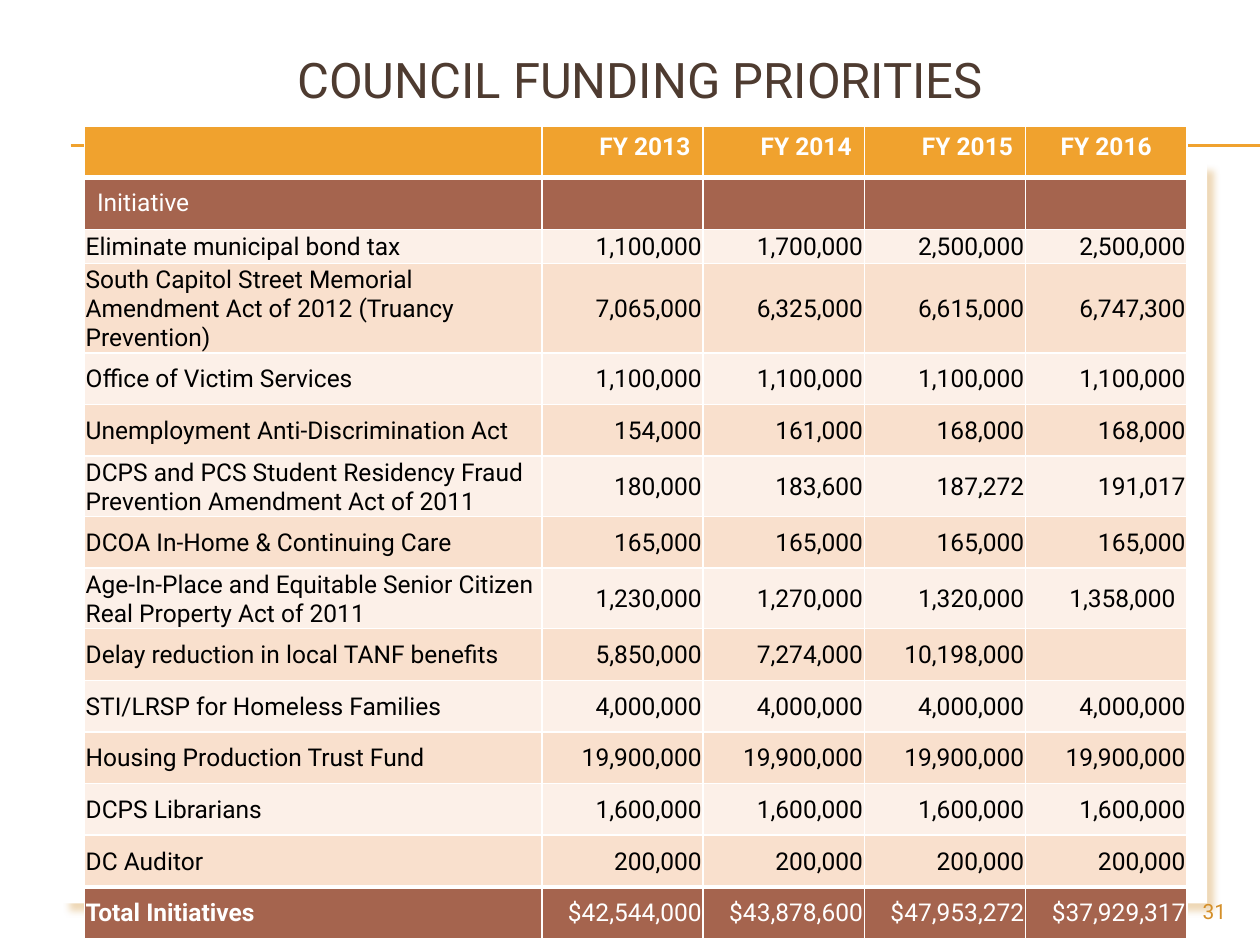
import pptx
import pptx.dml.color
import pptx.enum.shapes
import pptx.enum.text
import pptx.oxml.ns
import pptx.util
from lxml import etree

RGBColor = pptx.dml.color.RGBColor
Align = pptx.enum.text.PP_ALIGN
Anchor = pptx.enum.text.MSO_ANCHOR

WHITE = RGBColor(0xFF, 0xFF, 0xFF)
BLACK = RGBColor(0x00, 0x00, 0x00)
ORANGE = RGBColor(0xF0, 0xA2, 0x2E)
AMBER = RGBColor(0xD4, 0x8F, 0x29)
SHADOW = RGBColor(0xC8, 0x7D, 0x0E)
BROWN = RGBColor(0x4E, 0x3B, 0x30)
RUST = RGBColor(0xA5, 0x64, 0x4E)
BANDS = (RGBColor(0xFC, 0xF0, 0xE8), RGBColor(0xF9, 0xE0, 0xCD))

GRID_COLUMNS, GRID_ROWS = 100, 75
FONT = "Roboto"

YEARS = ["", "FY 2013", "FY 2014", "FY 2015", "FY 2016"]
INITIATIVES = [
    ("Eliminate municipal bond tax", "1,100,000", "1,700,000", "2,500,000", "2,500,000"),
    ("South Capitol Street Memorial Amendment Act of 2012 (Truancy Prevention)",
     "7,065,000", "6,325,000", "6,615,000", "6,747,300"),
    ("Office of Victim Services",) + ("1,100,000",) * 4,
    ("Unemployment Anti-Discrimination Act", "154,000", "161,000", "168,000", "168,000"),
    ("DCPS and PCS Student Residency Fraud Prevention Amendment Act of 2011",
     "180,000", "183,600", "187,272", "191,017"),
    ("DCOA In-Home & Continuing Care",) + ("165,000",) * 4,
    ("Age-In-Place and Equitable Senior Citizen Real Property Act of 2011",
     "1,230,000", "1,270,000", "1,320,000", "1,358,000"),
    ("Delay reduction in local TANF benefits", "5,850,000", "7,274,000", "10,198,000", ""),
    ("STI/LRSP for Homeless Families",) + ("4,000,000",) * 4,
    ("Housing Production Trust Fund",) + ("19,900,000",) * 4,
    ("DCPS Librarians",) + ("1,600,000",) * 4,
    ("DC Auditor",) + ("200,000",) * 4,
]
TOTALS = ("Total Initiatives", "$42,544,000", "$43,878,600", "$47,953,272", "$37,929,317")
ROW_HEIGHTS = [4.1, 4.1, 2.7, 4.8, 4.1, 4.1, 4.8, 4.1, 4.8] + [4.1] * 6
COLUMN_WIDTHS = [36.3] + [12.8] * 4


def write(frame, text, size=14, color=BLACK, bold=False, align=Align.LEFT):
    paragraph = frame.paragraphs[0]
    paragraph.alignment = align
    if text:
        run = paragraph.add_run()
        run.text = text
        run.font.name = FONT
        run.font.size = pptx.util.Pt(size)
        run.font.bold = bold
        run.font.color.rgb = color


def add_xml(parent, tag, **attributes):
    return etree.SubElement(parent, pptx.oxml.ns.qn(tag), attributes)


class FundingSlide:
    def __init__(self, deck):
        self.column = deck.slide_width / GRID_COLUMNS
        self.row = deck.slide_height / GRID_ROWS
        self.slide = deck.slides.add_slide(deck.slide_layouts[5])

    def box(self, left, top, width, height):
        return (int(left * self.column), int(top * self.row),
                int(width * self.column), int(height * self.row))

    def title(self, text, *place):
        heading = self.slide.shapes.title
        heading.left, heading.top, heading.width, heading.height = self.box(*place)
        heading.text_frame.vertical_anchor = Anchor.MIDDLE
        write(heading.text_frame, text, size=28, color=BROWN, align=Align.CENTER)

    def rule(self, start, end, top):
        x, y, width, _ = self.box(start, top, end - start, 0)
        line = self.slide.shapes.add_connector(
            pptx.enum.shapes.MSO_CONNECTOR.STRAIGHT, x, y, x + width, y)
        line.line.color.rgb = ORANGE
        line.line.width = pptx.util.Pt(0.75)
        add_xml(line._element.spPr, "a:effectLst")

    def panel(self, *place):
        panel = self.slide.shapes.add_shape(
            pptx.enum.shapes.MSO_SHAPE.RECTANGLE, *self.box(*place))
        panel.fill.solid()
        panel.fill.fore_color.rgb = WHITE
        panel.line.fill.background()
        panel.shadow.inherit = False
        effects = panel._element.spPr.find(pptx.oxml.ns.qn("a:effectLst"))
        shadow = add_xml(effects, "a:outerShdw", blurRad=str(pptx.util.Pt(4)),
                         dist=str(pptx.util.Pt(6)), dir="2700000", algn="tl",
                         rotWithShape="0")
        add_xml(add_xml(shadow, "a:srgbClr", val=str(SHADOW)), "a:alpha", val="30000")

    def page_number(self, text, *place):
        frame = self.slide.shapes.add_textbox(*self.box(*place)).text_frame
        frame.word_wrap = True
        write(frame, text, size=12, color=AMBER, align=Align.RIGHT)

    def table(self, left, top):
        place = self.box(left, top, sum(COLUMN_WIDTHS), sum(ROW_HEIGHTS))
        table = self.slide.shapes.add_table(
            len(ROW_HEIGHTS), len(COLUMN_WIDTHS), *place).table
        for column, width in zip(table.columns, COLUMN_WIDTHS):
            column.width = int(width * self.column)
        for row, height in zip(table.rows, ROW_HEIGHTS):
            row.height = int(height * self.row)
        return table

    def cell(self, cell, text, fill, top=1, bottom=1, anchor=Anchor.MIDDLE,
             tight=True, right=0.01, **style):
        for side, width in (("L", 1), ("R", 1), ("T", top), ("B", bottom)):
            border = add_xml(cell._tc.get_or_add_tcPr(), "a:ln" + side,
                             w=str(pptx.util.Pt(width)))
            add_xml(add_xml(border, "a:solidFill"), "a:srgbClr", val=str(WHITE))
        cell.fill.solid()
        cell.fill.fore_color.rgb = fill
        cell.vertical_anchor = anchor
        if tight:
            cell.margin_left = cell.margin_top = pptx.util.Inches(0.01)
            cell.margin_right = pptx.util.Inches(right)
            cell.margin_bottom = 0
        write(cell.text_frame, text, **style)


def fill_table(page, table):
    last = len(ROW_HEIGHTS) - 1
    for c, year in enumerate(YEARS):
        label_align = Align.LEFT if c == 0 else Align.RIGHT
        page.cell(table.cell(0, c), year, ORANGE, bottom=3, anchor=Anchor.TOP,
                  tight=False, color=WHITE, bold=True,
                  align=Align.CENTER if year == "FY 2016" else label_align)
        page.cell(table.cell(1, c), "" if c else "Initiative", RUST, top=3,
                  tight=False, color=WHITE)
        for r, initiative in enumerate(INITIATIVES):
            wraps = c == 0 and ROW_HEIGHTS[r + 2] > 4.1
            page.cell(table.cell(r + 2, c), initiative[c], BANDS[r % 2],
                      bottom=3 if r + 3 == last else 1,
                      anchor=Anchor.BOTTOM if wraps else Anchor.MIDDLE,
                      right=0.09 if initiative[c] == "1,358,000" else 0.01,
                      align=label_align)
        page.cell(table.cell(last, c), TOTALS[c], RUST, top=3, color=WHITE,
                  bold=c == 0, align=label_align)


def main():
    deck = pptx.Presentation()
    deck.slide_width = pptx.util.Inches(10)
    deck.slide_height = pptx.util.Inches(7.5)
    page = FundingSlide(deck)
    for top in (11.5, 11.6):
        page.rule(5.6, 100, top)
    page.panel(5, 13, 90.8, 58.7)
    page.title("COUNCIL FUNDING PRIORITIES", 3.3, 1.7, 95, 9.2)
    page.page_number("31", 90, 70.8, 8.3, 2.7)
    fill_table(page, page.table(6.7, 10))
    deck.save("out.pptx")


if __name__ == "__main__":
    main()
